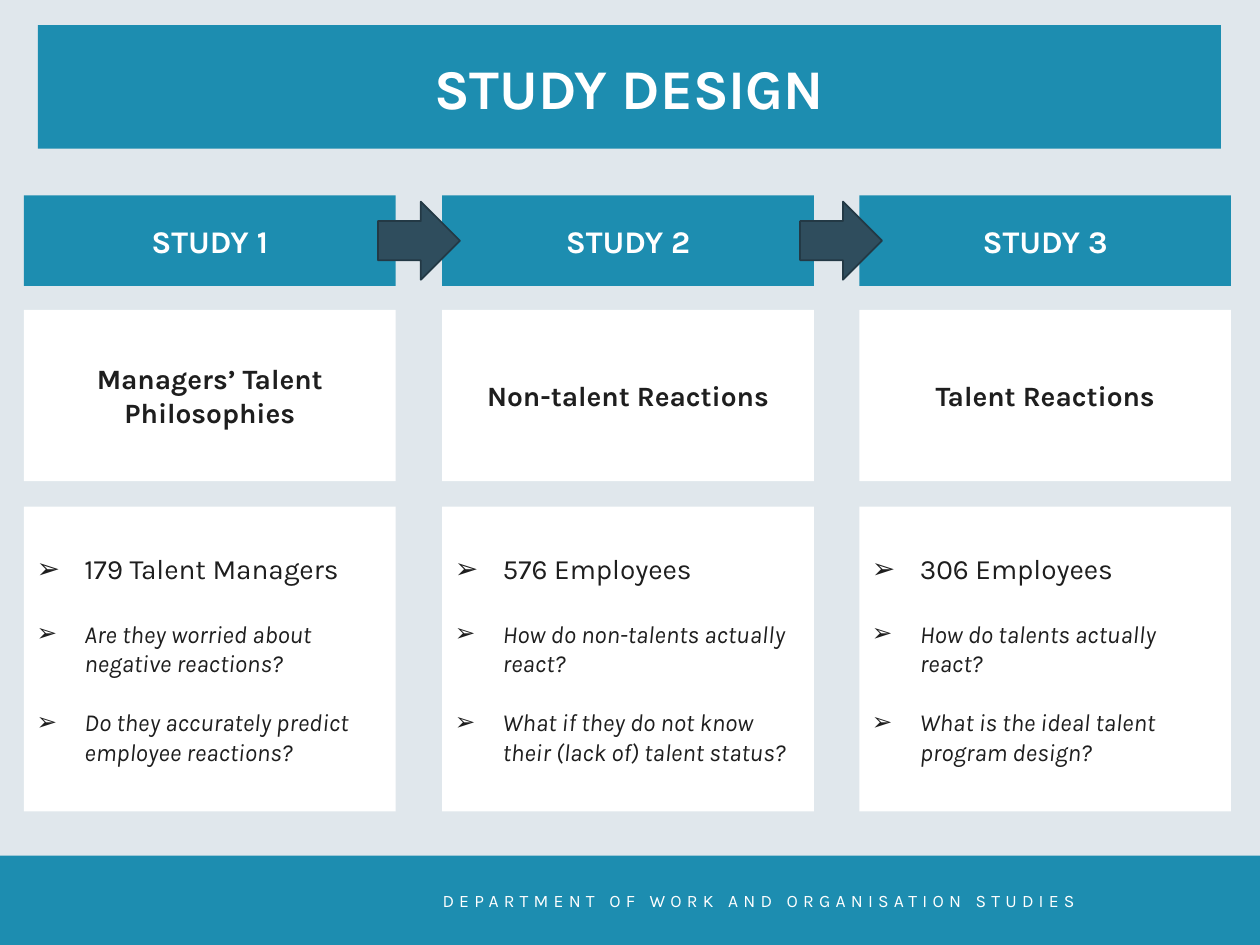
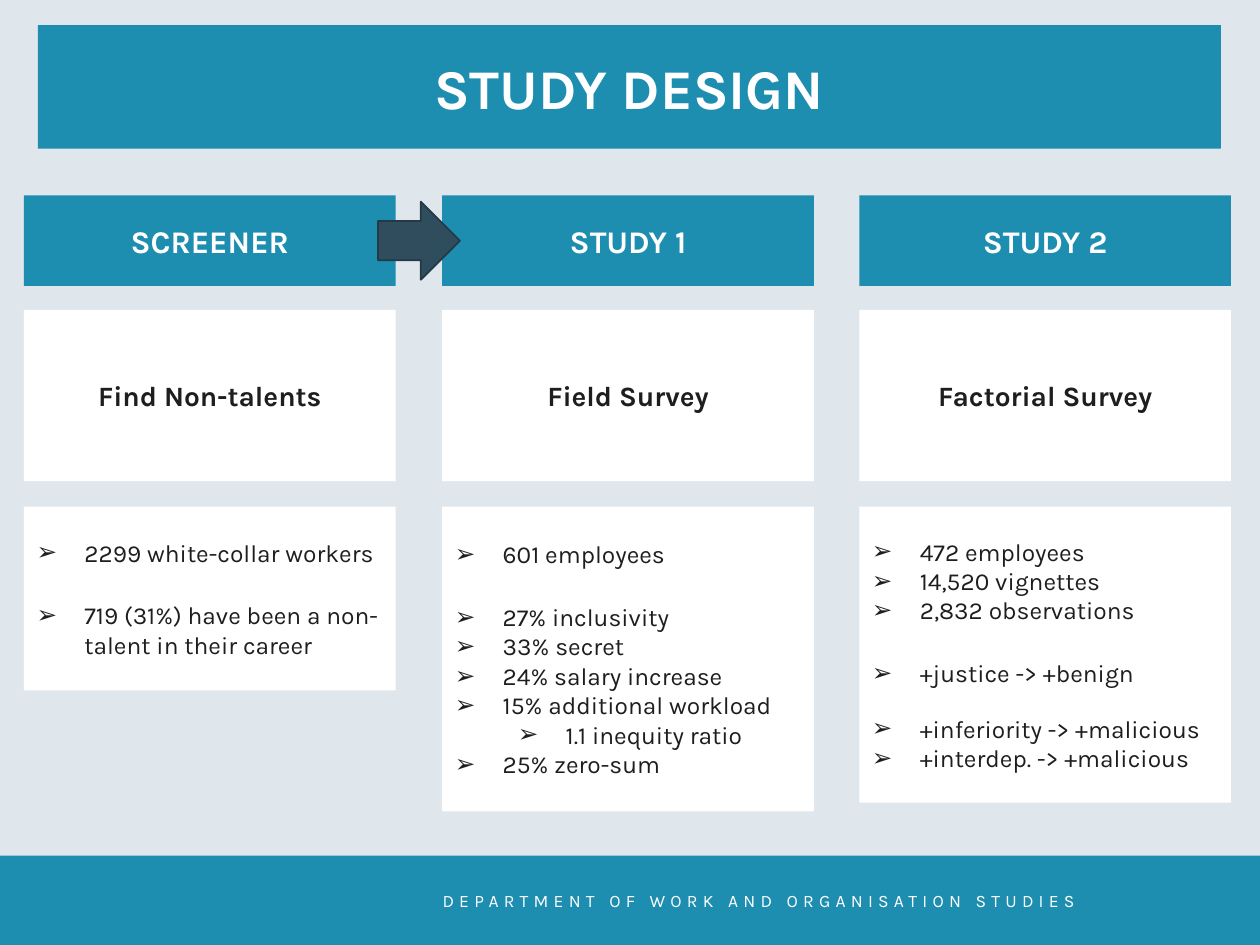
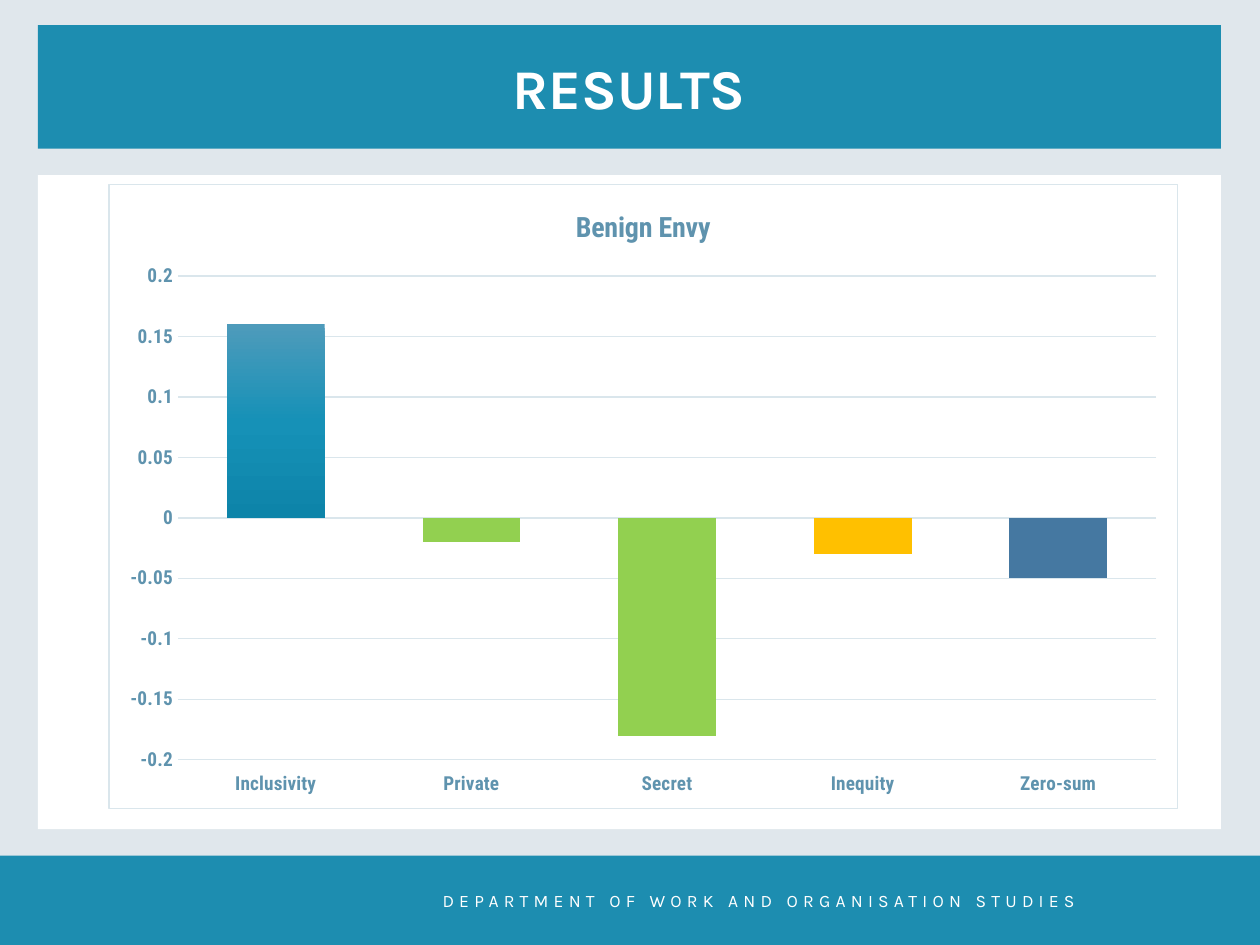
"""Build three slides on a study design and its results."""
from copy import deepcopy

from pptx import Presentation
from pptx.chart.data import CategoryChartData
from pptx.dml.color import RGBColor
from pptx.enum.chart import XL_CHART_TYPE, XL_TICK_LABEL_POSITION, XL_TICK_MARK
from pptx.enum.shapes import MSO_SHAPE
from pptx.enum.text import MSO_ANCHOR, MSO_AUTO_SIZE, PP_ALIGN
from pptx.oxml import parse_xml
from pptx.oxml.ns import nsdecls, qn
from pptx.util import Pt

PX = 9144
TEAL = RGBColor(0x1D, 0x8D, 0xB0)
MIST = RGBColor(0xE0, 0xE7, 0xEC)
WHITE = RGBColor(0xFF, 0xFF, 0xFF)
INK = RGBColor(0x1E, 0x1E, 0x1E)
SLATE = RGBColor(0x2F, 0x4D, 0x5D)
SLATE_EDGE = RGBColor(0x23, 0x39, 0x45)
LABEL = RGBColor(0x5F, 0x93, 0xAE)
GRID = RGBColor(0xDA, 0xE6, 0xEC)
GREEN = RGBColor(0x92, 0xD0, 0x50)
AMBER = RGBColor(0xFF, 0xC0, 0x00)
BLUE = RGBColor(0x45, 0x78, 0xA1)
GRADIENT = [
    (0, RGBColor(0x4E, 0x9B, 0xBB)),
    (0.5, RGBColor(0x16, 0x91, 0xB7)),
    (1, RGBColor(0x0D, 0x84, 0xA9)),
]
TEXT_FONT = "Karla"
CHART_FONT = "Roboto Condensed"
RECT, ARROW = MSO_SHAPE.RECTANGLE, MSO_SHAPE.RIGHT_ARROW
CENTER, LEFT, RIGHT = PP_ALIGN.CENTER, PP_ALIGN.LEFT, PP_ALIGN.RIGHT
MIDDLE, NO_FIT = MSO_ANCHOR.MIDDLE, MSO_AUTO_SIZE.NONE
NO_TICK, LOW = XL_TICK_MARK.NONE, XL_TICK_LABEL_POSITION.LOW
COLUMN_LEFTS = (19, 351, 682)
COLUMN_WIDTH = 295
COMPARISON, TITLE_ONLY = 4, 5

STUDY_SLIDES = [
    ("STUDY DESIGN", (300, 635), [
        ("STUDY 1", "Managers’ Talent Philosophies", 242, [
            ("179 Talent Managers", 16, False, 0, 0),
            ("Are they worried about negative reactions?", 14, True, 19, 0),
            ("Do they accurately predict employee reactions?", 14, True, 17, 0)]),
        ("STUDY 2", "Non-talent Reactions", 242, [
            ("576 Employees", 16, False, 0, 0),
            ("How do non-talents actually react?", 14, True, 19, 0),
            ("What if they do not know their (lack of) talent status?", 14, True, 17, 0)]),
        ("STUDY 3", "Talent Reactions", 242, [
            ("306 Employees", 16, False, 0, 0),
            ("How do talents actually react?", 14, True, 19, 0),
            ("What is the ideal talent program design?", 14, True, 17, 0)]),
    ]),
    ("STUDY DESIGN", (300,), [
        ("SCREENER", "Find Non-talents", 146, [
            ("2299 white-collar workers", 14, False, 0, 0),
            ("719 (31%) have been a non-talent in their career", 14, False, 19, 0)]),
        ("STUDY 1", "Field Survey", 242, [
            ("601 employees", 14, False, 0, 0),
            ("27% inclusivity", 14, False, 19, 0),
            ("33% secret", 14, False, 0, 0),
            ("24% salary increase", 14, False, 0, 0),
            ("15% additional workload", 14, False, 0, 0),
            ("1.1 inequity ratio", 14, False, 0, 1),
            ("25% zero-sum", 14, False, 0, 0)]),
        ("STUDY 2", "Factorial Survey", 235, [
            ("472 employees", 14, False, 0, 0),
            ("14,520 vignettes", 14, False, 0, 0),
            ("2,832 observations", 14, False, 0, 0),
            ("+justice -> +benign", 14, False, 19, 0),
            ("+inferiority -> +malicious", 14, False, 15, 0),
            ("+interdep. -> +malicious", 14, False, 0, 0)]),
    ]),
]


def place(shape, left, top, width, height, fill):
    """Position a shape and give it a plain fill and centred frame."""
    shape.left, shape.top = left * PX, top * PX
    shape.width, shape.height = width * PX, height * PX
    shape.fill.solid()
    shape.fill.fore_color.rgb = fill
    shape.line.fill.background()
    shape.shadow.inherit = False
    frame = shape.text_frame
    frame.word_wrap, frame.auto_size, frame.vertical_anchor = True, NO_FIT, MIDDLE
    return shape


def write(paragraph, text, size, color, bold=False, italic=False, align=CENTER):
    """Add one formatted run to a paragraph."""
    paragraph.alignment = align
    run = paragraph.add_run()
    run.text = text
    font = run.font
    font.name, font.size, font.bold, font.italic = TEXT_FONT, Pt(size), bold, italic
    font.color.rgb = color
    return run


prs = Presentation()
prs.slide_width, prs.slide_height = 1000 * PX, 750 * PX
master = prs.slide_master
master.background.fill.solid()
master.background.fill.fore_color.rgb = MIST

for heading, arrow_lefts, columns in STUDY_SLIDES:
    slide = prs.slides.add_slide(prs.slide_layouts[COMPARISON])
    slide.shapes.title.text_frame.text = heading
    *lists, spare = list(slide.placeholders)[1:]
    spare.element.getparent().remove(spare.element)
    for left, body, (label, topic, list_height, items) in zip(COLUMN_LEFTS, lists, columns):
        topic_box = place(slide.shapes.add_shape(RECT, 0, 0, 0, 0), left, 246, COLUMN_WIDTH, 136, WHITE)
        write(topic_box.text_frame.paragraphs[0], topic, 16, INK, bold=True)
        label_box = place(slide.shapes.add_shape(RECT, 0, 0, 0, 0), left, 155, COLUMN_WIDTH, 72, TEAL)
        write(label_box.text_frame.paragraphs[0], label, 18, WHITE, bold=True)
        frame = place(body, left, 402, COLUMN_WIDTH, list_height, WHITE).text_frame
        for number, (item, size, italic, gap, level) in enumerate(items):
            paragraph = frame.add_paragraph() if number else frame.paragraphs[0]
            properties = paragraph._p.get_or_add_pPr()
            properties.set("marL", str((38 + 50 * level) * PX))
            properties.set("indent", str(-38 * PX))
            properties.append(parse_xml(f'<a:buChar {nsdecls("a")} char="➢"/>'))
            paragraph.level = level
            paragraph.space_before = Pt(gap)
            write(paragraph, item, size, INK, italic=italic, align=LEFT)
    for left in arrow_lefts:
        arrow = place(slide.shapes.add_shape(ARROW, 0, 0, 0, 0), left, 160, 65, 62, SLATE)
        arrow.line.color.rgb = SLATE_EDGE
        arrow.line.width = Pt(1)

results = prs.slides.add_slide(prs.slide_layouts[TITLE_ONLY])
results.shapes.title.text_frame.text = "RESULTS"
for top, height in ((139, 145), (284, 374)):
    place(results.shapes.add_shape(RECT, 0, 0, 0, 0), 30, top, 939, height, WHITE)

effects = CategoryChartData()
effects.categories = ["Inclusivity", "Private", "Secret", "Inequity", "Zero-sum"]
effects.add_series("Series 1", (0.16, -0.02, -0.18, -0.03, -0.05))
chart = results.shapes.add_chart(
    XL_CHART_TYPE.COLUMN_CLUSTERED, 86 * PX, 146 * PX, 849 * PX, 496 * PX, effects).chart
chart.font.name, chart.font.size = CHART_FONT, Pt(10)
chart.font.color.rgb = SLATE
chart.has_legend = False
chart.has_title = True
chart_title = chart.chart_title.text_frame.paragraphs[0].add_run()
chart_title.text = "Benign Envy"
category_axis, value_axis = chart.category_axis, chart.value_axis
for font, size in ((chart_title.font, 16), (category_axis.tick_labels.font, 11),
                   (value_axis.tick_labels.font, 11)):
    font.name, font.size, font.bold = CHART_FONT, Pt(size), True
    font.color.rgb = LABEL
for axis in (category_axis, value_axis):
    axis.major_tick_mark = axis.minor_tick_mark = NO_TICK
category_axis.tick_label_position = LOW
category_axis.format.line.color.rgb = GRID
category_axis.format.line.width = Pt(1)
value_axis.minimum_scale, value_axis.maximum_scale, value_axis.major_unit = -0.2, 0.2, 0.05
value_axis.format.line.fill.background()
value_axis.major_gridlines.format.line.color.rgb = GRID
value_axis.major_gridlines.format.line.width = Pt(0.75)
plot = chart.plots[0]
plot.gap_width, plot.overlap, plot.vary_by_categories = 100, -24, False
bars = plot.series[0]
bars.invert_if_negative = False
bars.format.fill.gradient()
bars.format.fill.gradient_angle = 270
stops = next(bars._element.iter(qn("a:gsLst")))
stops.append(deepcopy(stops[0]))
for stop, (position, color) in zip(bars.format.fill.gradient_stops, GRADIENT):
    stop.position = position
    stop.color.rgb = color
for number, color in enumerate((GREEN, GREEN, AMBER, BLUE), start=1):
    bar_fill = bars.points[number].format.fill
    bar_fill.solid()
    bar_fill.fore_color.rgb = color
chart.element.find(qn("c:chart")).addnext(parse_xml(
    f'<c:spPr {nsdecls("c", "a")}><a:solidFill><a:srgbClr val="{WHITE}"/></a:solidFill>'
    f'<a:ln w="{Pt(0.75)}"><a:solidFill><a:srgbClr val="{GRID}"/></a:solidFill></a:ln></c:spPr>'))

footer_band = place(prs.slides[0].shapes.add_shape(RECT, 0, 0, 0, 0), 0, 679, 1000, 71, TEAL)
master.element.cSld.spTree.append(footer_band.element)

for slide in prs.slides:
    title = slide.shapes.title
    heading = title.text_frame.text
    title.text_frame.clear()
    place(title, 30, 20, 939, 98, TEAL)
    write(title.text_frame.paragraphs[0], heading, 32, WHITE, bold=True)
    footer = slide.shapes.add_textbox(169 * PX, 679 * PX, 704 * PX, 71 * PX).text_frame
    footer.word_wrap, footer.vertical_anchor = True, MIDDLE
    footer.margin_left = footer.margin_top = footer.margin_bottom = 0
    footer.margin_right = 20 * PX
    department = write(footer.paragraphs[0], "DEPARTMENT OF WORK AND ORGANISATION STUDIES",
                       10, WHITE, align=RIGHT)
    department.font._element.set("spc", "300")

prs.save("out.pptx")
